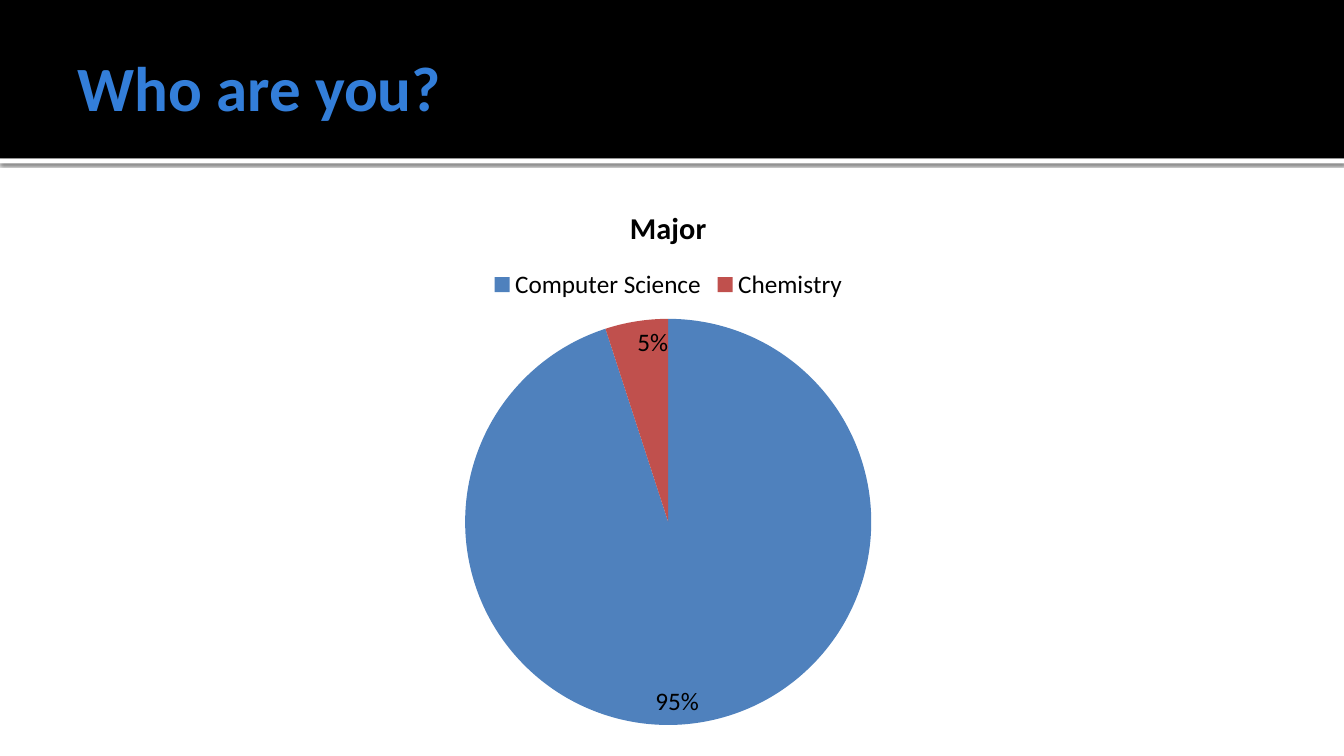
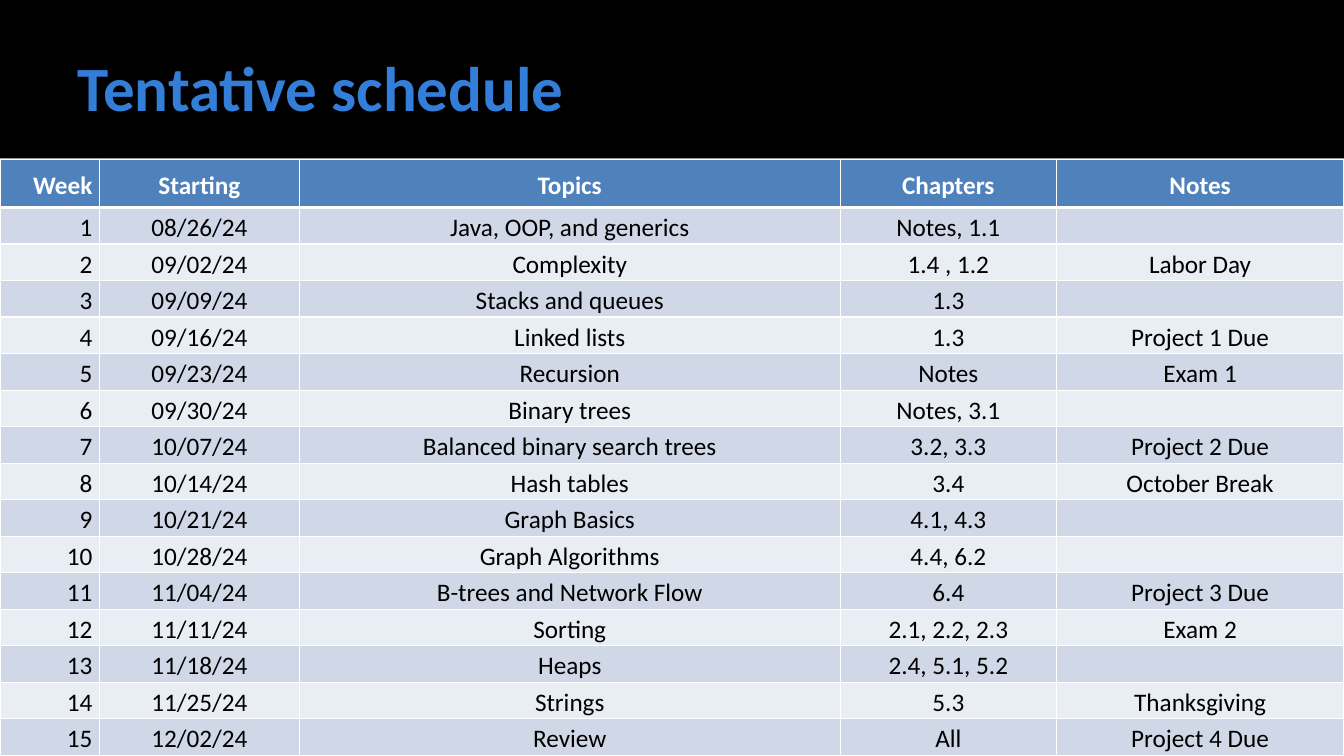
from lxml.etree import SubElement
from pptx import Presentation
from pptx.chart.data import CategoryChartData
from pptx.dml.color import RGBColor
from pptx.enum.chart import XL_CHART_TYPE as ChartType
from pptx.enum.chart import XL_LABEL_POSITION as LabelPosition
from pptx.enum.chart import XL_LEGEND_POSITION as LegendPosition
from pptx.enum.shapes import MSO_SHAPE as Shape
from pptx.enum.text import MSO_ANCHOR as Anchor
from pptx.enum.text import PP_ALIGN as Align
from pptx.oxml.ns import qn
from pptx.util import Cm, Pt

# Content
MAJORS = {"Computer Science": 95, "Chemistry": 5}
HEADINGS = ("Week", "Starting", "Topics", "Chapters", "Notes")
WEEKS = [
    ("08/26/24", "Java, OOP, and generics", "Notes, 1.1", ""),
    ("09/02/24", "Complexity", "1.4 , 1.2", "Labor Day"),
    ("09/09/24", "Stacks and queues", "1.3", ""),
    ("09/16/24", "Linked lists", "1.3", "Project 1 Due"),
    ("09/23/24", "Recursion", "Notes", "Exam 1"),
    ("09/30/24", "Binary trees", "Notes, 3.1", ""),
    ("10/07/24", "Balanced binary search trees", "3.2, 3.3", "Project 2 Due"),
    ("10/14/24", "Hash tables", "3.4", "October Break"),
    ("10/21/24", "Graph Basics", "4.1, 4.3", ""),
    ("10/28/24", "Graph Algorithms", "4.4, 6.2", ""),
    ("11/04/24", "B-trees and Network Flow", "6.4", "Project 3 Due"),
    ("11/11/24", "Sorting", "2.1, 2.2, 2.3", "Exam 2"),
    ("11/18/24", "Heaps", "2.4, 5.1, 5.2", ""),
    ("11/25/24", "Strings", "5.3", "Thanksgiving"),
    ("12/02/24", "Review", "All", "Project 4 Due"),
]

# Shared style
COLORS = {"black": "000000", "white": "FFFFFF", "title": "337ED9",
          "blue": "4F81BD", "red": "C0504D",
          "odd": "D0D8E8", "even": "E9EDF4"}
FONT = "Calibri"
WIDTH, HEIGHT = Cm(33.87), Cm(19.05)
BAND_HEIGHT = Cm(3.99)
COLUMN_WIDTHS = [Cm(2.51), Cm(5.03), Cm(13.64), Cm(5.44)]
COLUMN_WIDTHS.append(WIDTH - sum(COLUMN_WIDTHS))
HEADER_HEIGHT, ROW_HEIGHT = Cm(1.22), Cm(0.92)


def color(name):
    return RGBColor.from_string(COLORS[name])


def style_font(font, size, color_name, bold=False):
    font.name, font.size, font.bold = FONT, Pt(size), bold
    font.color.rgb = color(color_name)


def add_bar(page, top, height, color_name):
    bar = page.shapes.add_shape(Shape.RECTANGLE, 0, top, WIDTH, height)
    bar.shadow.inherit = False
    bar.fill.solid()
    bar.fill.fore_color.rgb = color(color_name)
    bar.line.fill.background()
    return bar


def add_shadow(shape):
    effects = shape._element.spPr.find(qn("a:effectLst"))
    shadow = SubElement(effects, qn("a:outerShdw"), blurRad=str(Pt(2.5)),
                        dist=str(Pt(0.8)), dir="5400000", rotWithShape="0")
    tint = SubElement(shadow, qn("a:srgbClr"), val=COLORS["black"])
    SubElement(tint, qn("a:alpha"), val="60000")


def add_page(deck, title):
    page = deck.slides.add_slide(deck.slide_layouts[6])
    add_shadow(add_bar(page, BAND_HEIGHT, Cm(0.13), "white"))
    add_bar(page, 0, BAND_HEIGHT, "black")
    box = page.shapes.add_textbox(Cm(1.7), Cm(0.43), Cm(30.48), Cm(3.48))
    frame = box.text_frame
    frame.word_wrap = True
    frame.vertical_anchor = Anchor.MIDDLE
    frame.margin_left = Cm(0.25)
    frame.margin_right = frame.margin_top = frame.margin_bottom = Cm(0.13)
    span = frame.paragraphs[0].add_run()
    span.text = title
    style_font(span.font, 45, "title", bold=True)
    return page


def add_major_chart(page):
    data = CategoryChartData()
    data.categories = list(MAJORS)
    data.add_series("Major", list(MAJORS.values()))
    chart = page.shapes.add_chart(ChartType.PIE, Cm(5.51), Cm(4.65),
                                  Cm(22.66), Cm(13.97), data).chart
    style_font(chart.font, 18, "black")

    chart.has_title = True
    span = chart.chart_title.text_frame.paragraphs[0].add_run()
    span.text = "Major"
    style_font(span.font, 21.6, "black", bold=True)

    chart.has_legend = True
    chart.legend.position = LegendPosition.TOP
    chart.legend.include_in_layout = False

    plot = chart.plots[0]
    plot.vary_by_categories = True
    for index, name in enumerate(("blue", "red")):
        fill = plot.series[0].points[index].format.fill
        fill.solid()
        fill.fore_color.rgb = color(name)

    plot.has_data_labels = True
    labels = plot.data_labels
    labels.show_value, labels.show_percentage = False, True
    labels.number_format, labels.number_format_is_linked = "0%", False
    labels.position = LabelPosition.INSIDE_END
    style_font(labels.font, 18, "black")


def add_borders(cell, top, bottom):
    properties = cell._tc.get_or_add_tcPr()
    for side, width in (("L", 1), ("R", 1), ("T", top), ("B", bottom)):
        line = SubElement(properties, qn(f"a:ln{side}"), w=str(Pt(width)))
        fill = SubElement(line, qn("a:solidFill"))
        SubElement(fill, qn("a:srgbClr"), val=COLORS["white"])


def fill_cell(cell, text, row, column):
    header = row == 0
    add_borders(cell, top=3 if row == 1 else 1, bottom=3 if header else 1)
    cell.fill.solid()
    cell.fill.fore_color.rgb = color(
        "blue" if header else "odd" if row % 2 else "even")
    cell.vertical_anchor = Anchor.MIDDLE
    cell.margin_left = cell.margin_right = Cm(0.18)
    cell.margin_top = cell.margin_bottom = 0
    if text:
        para = cell.text_frame.paragraphs[0]
        para.alignment = Align.CENTER if column else Align.RIGHT
        para.line_spacing = 1.15
        span = para.add_run()
        span.text = text
        style_font(span.font, 18, "white" if header else "black", header)


def add_schedule(page):
    rows = [HEADINGS]
    rows += [(str(number), *week) for number, week in enumerate(WEEKS, 1)]
    heights = [HEADER_HEIGHT] + [ROW_HEIGHT] * len(WEEKS)
    table = page.shapes.add_table(len(rows), len(HEADINGS), 0, Cm(4.01),
                                  WIDTH, sum(heights)).table
    for column, width in zip(table.columns, COLUMN_WIDTHS):
        column.width = width
    for row, height in zip(table.rows, heights):
        row.height = height
    for row, texts in enumerate(rows):
        for column, text in enumerate(texts):
            fill_cell(table.cell(row, column), text, row, column)


def main():
    deck = Presentation()
    deck.slide_width, deck.slide_height = WIDTH, HEIGHT
    add_major_chart(add_page(deck, "Who are you?"))
    add_schedule(add_page(deck, "Tentative schedule"))
    deck.save("out.pptx")


if __name__ == "__main__":
    main()
